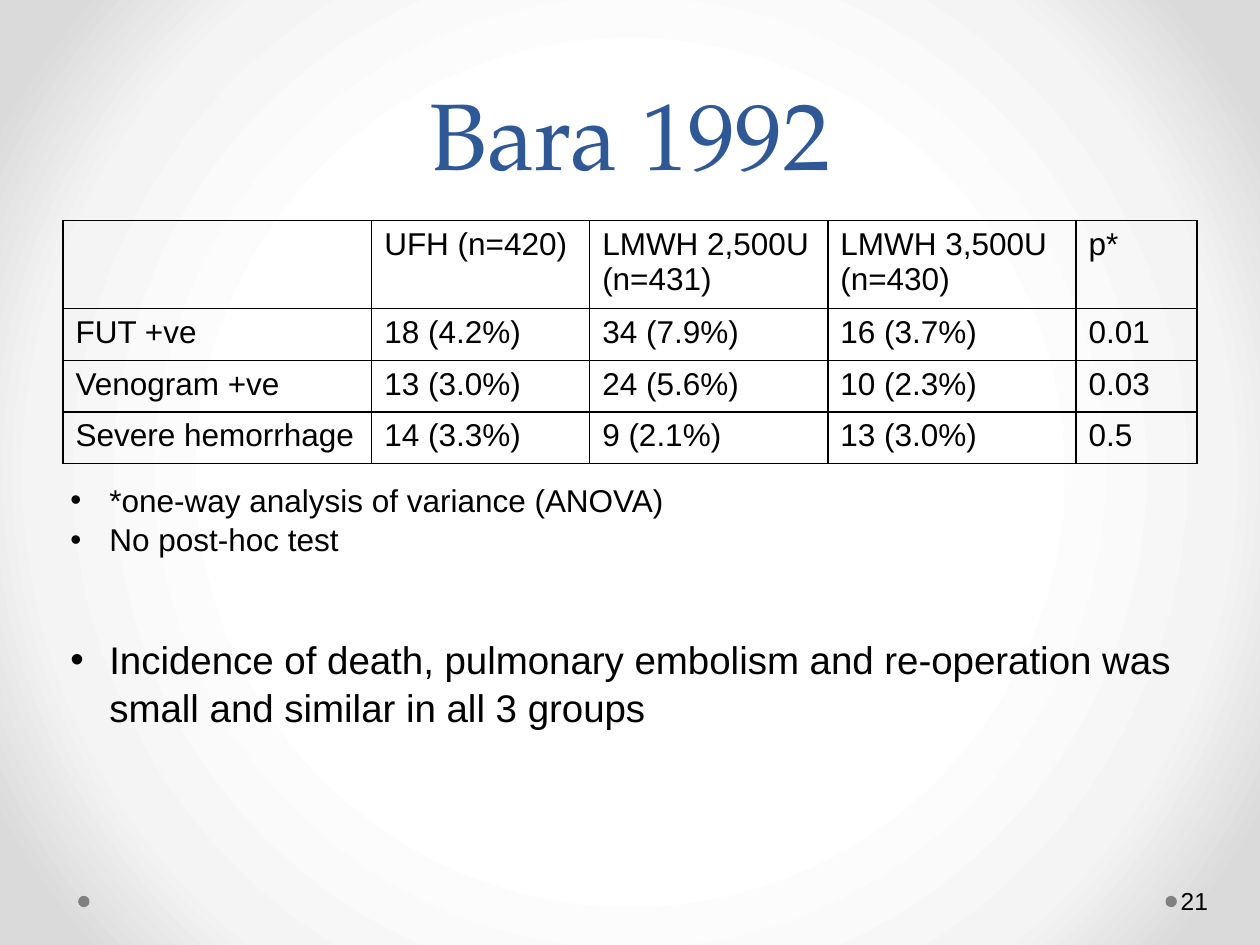
import lxml.etree
import pptx
import pptx.dml.color
import pptx.enum.shapes
import pptx.enum.text
import pptx.oxml
import pptx.oxml.ns
import pptx.util

Inches, Pt = pptx.util.Inches, pptx.util.Pt
Color = pptx.dml.color.RGBColor.from_string
Align, Anchor = pptx.enum.text.PP_ALIGN, pptx.enum.text.MSO_ANCHOR
qn = pptx.oxml.ns.qn
NAMESPACE = "http://schemas.openxmlformats.org/drawingml/2006/main"

THEME = {
    "title_font": "TeX Gyre Pagella", "body_font": "Arial",
    "title": "2F5897", "text": "000000", "border": "000000", "dot": "808080",
    "title_size": 54, "body_size": 18, "point_size": 22, "number_size": 14,
    "background": [(50, "FFFFFF"), (76, "F4F4F4"), (92, "DADADA")],
}


def write(paragraph, text, size=THEME["body_size"], font=THEME["body_font"],
          color=THEME["text"], align=Align.LEFT, spacing=None, before=0, bullet=False):
    paragraph.alignment = align
    paragraph.line_spacing = spacing
    paragraph.space_before = Pt(before)
    run = paragraph.add_run()
    run.text = text
    run.font.size = Pt(size)
    run.font.name = font
    run.font.color.rgb = Color(color)
    if bullet:
        properties = paragraph._p.get_or_add_pPr()
        properties.set("marL", str(Inches(0.31)))
        properties.set("indent", str(-Inches(0.31)))
        lxml.etree.SubElement(properties, qn("a:buFont")).set("typeface", THEME["body_font"])
        lxml.etree.SubElement(properties, qn("a:buChar")).set("char", "•")


def add_text_frame(left, top, width, height, anchor=Anchor.TOP):
    frame = slide.shapes.add_textbox(
        Inches(left), Inches(top), Inches(width), Inches(height)).text_frame
    frame.word_wrap = True
    frame.vertical_anchor = anchor
    return frame


presentation = pptx.Presentation()
presentation.slide_width, presentation.slide_height = Inches(10), Inches(7.5)
slide = presentation.slides.add_slide(presentation.slide_layouts[6])

# Background: radial gradient, white in the middle
slide.background.fill.gradient()
gradient = slide.background._cSld.find(".//" + qn("a:gradFill"))
stops = "".join(f'<a:gs pos="{position * 1000}"><a:srgbClr val="{color}"/></a:gs>'
                for position, color in THEME["background"])
gradient.getparent().replace(gradient, pptx.oxml.parse_xml(
    f'<a:gradFill xmlns:a="{NAMESPACE}" rotWithShape="1"><a:gsLst>{stops}</a:gsLst>'
    '<a:path path="circle"><a:fillToRect l="50000" t="50000" r="50000" b="50000"/>'
    '</a:path></a:gradFill>'))

# Footer dots
for left in (9.25, 0.62):
    dot = slide.shapes.add_shape(pptx.enum.shapes.MSO_SHAPE.OVAL,
                                 Inches(left), Inches(7.11), Inches(0.09), Inches(0.09))
    dot.shadow.inherit = False
    dot.fill.solid()
    dot.fill.fore_color.rgb = Color(THEME["dot"])
    dot.line.fill.background()

# Title
title = add_text_frame(0.5, 0.3, 9, 1.25, Anchor.BOTTOM)
write(title.paragraphs[0], "Bara 1992", size=THEME["title_size"], font=THEME["title_font"],
      color=THEME["title"], align=Align.CENTER, spacing=Pt(58))

# Results table
results = [
    ["", "UFH (n=420)", "LMWH 2,500U (n=431)", "LMWH 3,500U (n=430)", "p*"],
    ["FUT +ve", "18 (4.2%)", "34 (7.9%)", "16 (3.7%)", "0.01"],
    ["Venogram +ve", "13 (3.0%)", "24 (5.6%)", "10 (2.3%)", "0.03"],
    ["Severe hemorrhage", "14 (3.3%)", "9 (2.1%)", "13 (3.0%)", "0.5"],
]
column_widths = [2.45, 1.73, 1.89, 1.97, 0.96]
row_heights = [0.66] + [0.41] * 3
table = slide.shapes.add_table(len(row_heights), len(column_widths), Inches(0.5), Inches(1.75),
                               Inches(sum(column_widths)), Inches(sum(row_heights))).table
table.first_row = table.horz_banding = False
for column, width in zip(table.columns, column_widths):
    column.width = Inches(width)
for row, height, texts in zip(table.rows, row_heights, results):
    row.height = Inches(height)
    for cell, text in zip(row.cells, texts):
        write(cell.text_frame.paragraphs[0], text)
        cell.fill.background()
        properties = cell._tc.get_or_add_tcPr()
        for index, side in enumerate(("lnL", "lnR", "lnT", "lnB")):
            properties.insert(index, pptx.oxml.parse_xml(
                f'<a:{side} xmlns:a="{NAMESPACE}" w="{Pt(1)}"><a:solidFill>'
                f'<a:srgbClr val="{THEME["border"]}"/></a:solidFill></a:{side}>'))

# Slide number
number = add_text_frame(9.34, 6.95, 0.61, 0.4, Anchor.MIDDLE)
number.margin_left, number.margin_right = Inches(0.03), Inches(0.05)
write(number.paragraphs[0], "21", size=THEME["number_size"])

# Notes under the table
notes = add_text_frame(0.46, 3.75, 9.14, 2.05)
points = [
    ("*one-way analysis of variance (ANOVA)", THEME["body_size"], 0),
    ("No post-hoc test", THEME["body_size"], 0),
    ("Incidence of death, pulmonary embolism and re-operation was "
     "small and similar in all 3 groups", THEME["point_size"], 43),
]
for index, (text, size, before) in enumerate(points):
    paragraph = notes.add_paragraph() if index else notes.paragraphs[0]
    write(paragraph, text, size=size, before=before, spacing=1.05, bullet=True)

presentation.save("out.pptx")
